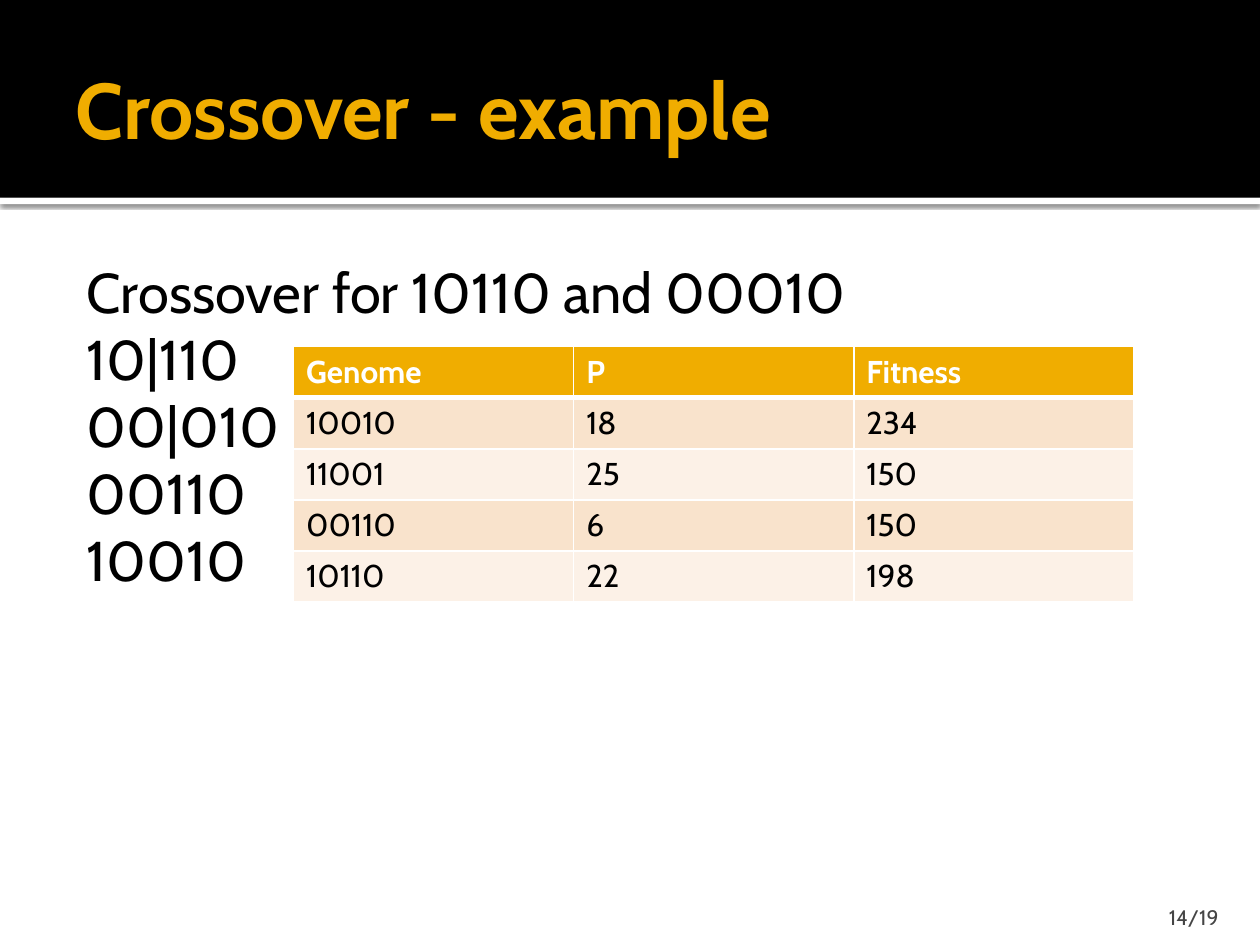
from lxml import etree
from pptx import Presentation
from pptx import util as u
from pptx.dml import color
from pptx.enum import shapes, text
from pptx.oxml import ns

BLACK, WHITE, GOLD, GREY = "000000", "FFFFFF", "F0AD00", "454545"
BANDS = ("F9E3CC", "FCF1E7")


def rgb(value):
    return color.RGBColor.from_string(value)


def add_xml(parent, tag, **attributes):
    return etree.SubElement(parent, ns.qn(tag), attributes)


class SlideBuilder:
    font = "Cabin"

    def __init__(self, slide):
        self.slide = slide

    def styled_run(self, paragraph, words, size, ink, bold=False):
        run = paragraph.add_run()
        run.text = words
        run.font.name = self.font
        run.font.size = u.Pt(size)
        run.font.bold = bold
        run.font.color.rgb = rgb(ink)

    def band(self, top, height, fill, shadow=False):
        strip = self.slide.shapes.add_shape(
            shapes.MSO_SHAPE.RECTANGLE, 0, u.Inches(top), u.Inches(10), u.Inches(height))
        strip.fill.solid()
        strip.fill.fore_color.rgb = rgb(fill)
        strip.line.fill.background()
        strip.shadow.inherit = False
        if shadow:
            effects = strip._element.spPr.find(ns.qn("a:effectLst"))
            outer = add_xml(effects, "a:outerShdw", blurRad=str(u.Pt(2.5)),
                            dist=str(u.Pt(0.8)), dir="5400000", algn="tl", rotWithShape="0")
            tint = add_xml(outer, "a:srgbClr", val=BLACK)
            add_xml(tint, "a:alpha", val="60000")

    def text_box(self, box, insets, lines, size, ink, bold=False,
                 anchor=text.MSO_ANCHOR.TOP, align=text.PP_ALIGN.LEFT, indent=None):
        frame = self.slide.shapes.add_textbox(*map(u.Inches, box)).text_frame
        frame.word_wrap = True
        frame.vertical_anchor = anchor
        (frame.margin_left, frame.margin_top,
         frame.margin_right, frame.margin_bottom) = map(u.Inches, insets)
        for index, line in enumerate(lines):
            paragraph = frame.add_paragraph() if index else frame.paragraphs[0]
            paragraph.alignment = align
            if indent:
                margin, hanging = indent
                properties = paragraph._p.get_or_add_pPr()
                properties.set("marL", str(u.Inches(margin)))
                properties.set("indent", str(u.Inches(hanging)))
            self.styled_run(paragraph, line, size, ink, bold)

    def cell_borders(self, cell, widths):
        properties = cell._tc.get_or_add_tcPr()
        for side, width in zip("LRTB", widths):
            line = add_xml(properties, f"a:ln{side}", w=str(u.Pt(width)))
            add_xml(add_xml(line, "a:solidFill"), "a:srgbClr", val=WHITE)

    def table(self, box, rows, size):
        grid = self.slide.shapes.add_table(
            len(rows), len(rows[0]), *map(u.Inches, box)).table
        for r, row in enumerate(rows):
            header = r == 0
            for c, value in enumerate(row):
                cell = grid.cell(r, c)
                self.cell_borders(cell, (1, 1, 3 if r == 1 else 1, 3 if header else 1))
                cell.fill.solid()
                cell.fill.fore_color.rgb = rgb(GOLD if header else BANDS[(r - 1) % 2])
                self.styled_run(cell.text_frame.paragraphs[0], value, size,
                                WHITE if header else BLACK, header)


def main():
    deck = Presentation()
    deck.slide_width, deck.slide_height = u.Inches(10), u.Inches(7.5)
    builder = SlideBuilder(deck.slides.add_slide(deck.slide_layouts[6]))

    builder.band(1.57, 0.05, WHITE, shadow=True)
    builder.band(0, 1.57, BLACK)
    builder.text_box((0.5, 0.17, 9, 1.37), (0.1, 0.05, 0.05, 0.05),
                     ["Crossover - example"], 45, GOLD, bold=True,
                     anchor=text.MSO_ANCHOR.MIDDLE)
    crossover_steps = ["Crossover for 10110 and 00010", "10|110", "00|010", "00110", "10010"]
    builder.text_box((0.5, 1.94, 9, 5.06), (0.06, 0.1, 0.1, 0.05),
                     crossover_steps, 32, BLACK, indent=(0.48, -0.35))
    population = [
        ("Genome", "P", "Fitness"),
        ("10010", "18", "234"),
        ("11001", "25", "150"),
        ("00110", "6", "150"),
        ("10110", "22", "198"),
    ]
    builder.table((2.33, 2.75, 6.67, 2.03), population, 18)
    builder.text_box((8.97, 7.08, 0.8, 0.3), (0.1, 0.05, 0.1, 0), ["14/19"], 12, GREY,
                     anchor=text.MSO_ANCHOR.BOTTOM, align=text.PP_ALIGN.RIGHT)
    deck.save("out.pptx")


if __name__ == "__main__":
    main()
